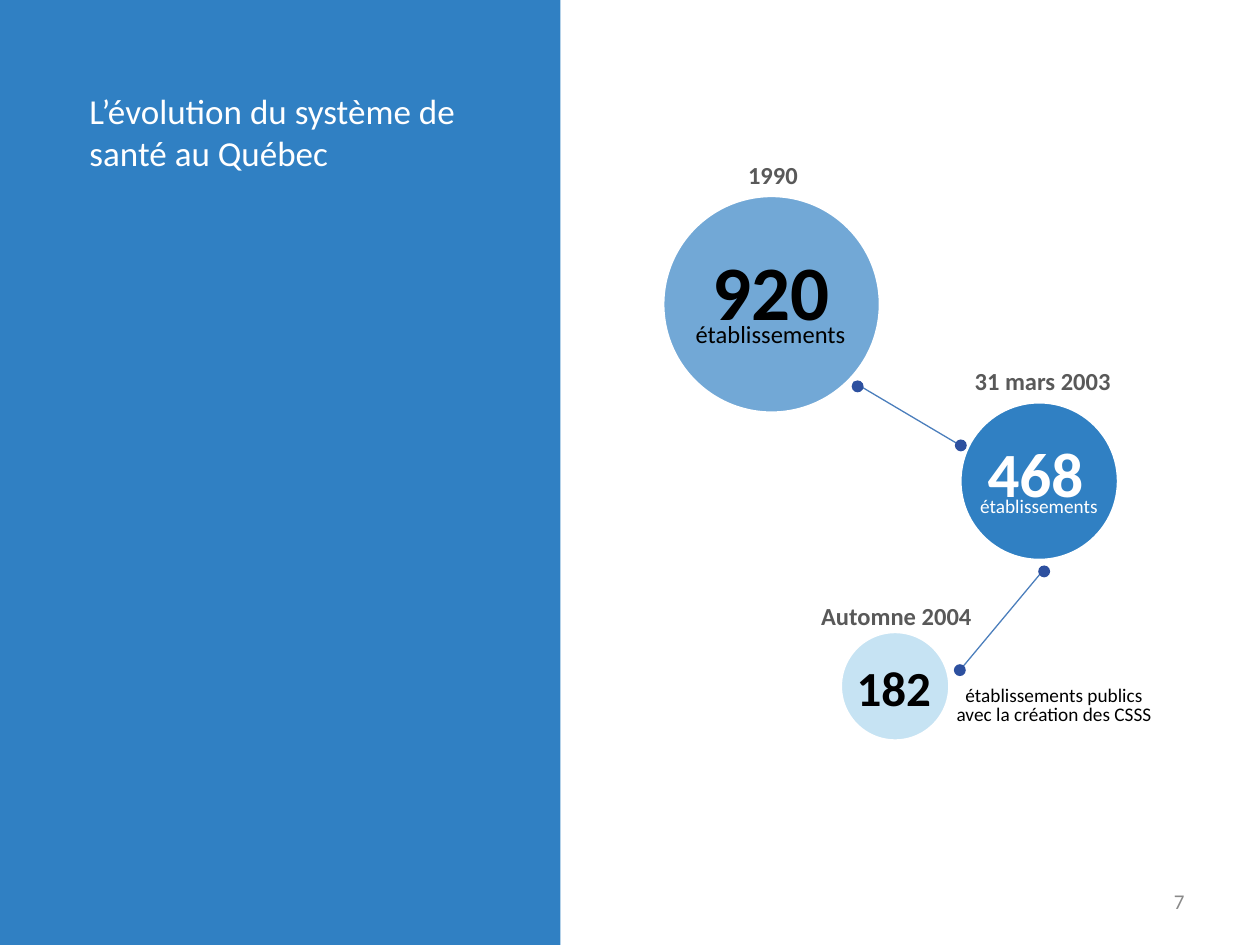
from lxml.etree import SubElement
from pptx import Presentation
from pptx.dml.color import RGBColor
from pptx.enum.shapes import MSO_CONNECTOR, MSO_SHAPE
from pptx.enum.text import MSO_ANCHOR, MSO_AUTO_SIZE, PP_ALIGN
from pptx.oxml.ns import qn
from pptx.util import Cm, Pt

COLORS = {
    "panel": "3080C3", "pale": "C6E3F3", "dot": "2D509F", "link": "4B7EBC",
    "white": "FFFFFF", "black": "000000", "date": "595959", "number": "898989",
}
LEFT, CENTER, RIGHT = PP_ALIGN.LEFT, PP_ALIGN.CENTER, PP_ALIGN.RIGHT
DOT_SIZE = 0.24


def rgb(name):
    return RGBColor.from_string(COLORS[name])


def add_filled(slide, kind, box, color, alpha=None, outline=None):
    shape = slide.shapes.add_shape(kind, *map(Cm, box))
    shape.shadow.inherit = False
    shape.fill.solid()
    shape.fill.fore_color.rgb = rgb(color)
    if alpha:
        fill_color = shape.element.spPr.find(qn("a:solidFill"))[0]
        SubElement(fill_color, qn("a:alpha")).set("val", str(alpha * 1000))
    if outline:
        shape.line.color.rgb = rgb(outline)
        shape.line.width = Pt(2)
    else:
        shape.line.fill.background()


def add_link(slide, start, end):
    link = slide.shapes.add_connector(MSO_CONNECTOR.STRAIGHT, *map(Cm, start + end))
    link.line.color.rgb = rgb("link")
    link.line.width = Pt(0.75)
    SubElement(link.element.spPr, qn("a:effectLst"))


def write_text(shape, lines, size, color, bold=False, align=LEFT,
               anchor=MSO_ANCHOR.TOP, spacing=None):
    frame = shape.text_frame
    frame.text = "\n".join(lines)
    frame_format = {"word_wrap": True, "auto_size": MSO_AUTO_SIZE.NONE,
                    "vertical_anchor": anchor}
    for name, value in frame_format.items():
        setattr(frame, name, value)
    font_format = {"name": "Calibri", "size": Pt(size), "bold": bold}
    for paragraph in frame.paragraphs:
        paragraph.alignment = align
        if spacing:
            paragraph.line_spacing = Pt(spacing)
        for name, value in font_format.items():
            setattr(paragraph.font, name, value)
        paragraph.font.color.rgb = rgb(color)


def add_label(slide, box, lines, size, color, **options):
    write_text(slide.shapes.add_textbox(*map(Cm, box)), lines, size, color, **options)


def set_title(slide, text):
    title = slide.shapes.title
    title.left, title.top, title.width, title.height = map(Cm, (1.55, 1.68, 8.2, 1.96))
    write_text(title, [text], 20, "white")
    # Bring the title in front of the panel
    slide.shapes.element.append(title.element)


def main():
    prs = Presentation()
    prs.slide_width, prs.slide_height = Cm(25.4), Cm(19.05)
    slide = prs.slides.add_slide(prs.slide_layouts[5])

    # Side panel with the title
    add_filled(slide, MSO_SHAPE.RECTANGLE, (0, 0, 11.3, 19.05), "panel")
    set_title(slide, "L’évolution du système de santé au Québec")

    # Circles sized by number of establishments
    for left, top, size, color, alpha in [
        (13.36, 3.94, 4.39, "panel", 68),
        (19.35, 8.1, 3.2, "panel", None),
        (16.94, 12.73, 2.21, "pale", None),
    ]:
        add_filled(slide, MSO_SHAPE.OVAL, (left, top, size, size), color, alpha, "white")

    # Dates
    for box, date, align in [
        ((14.83, 3.1, 1.6, 1.24), "1990", LEFT),
        ((19.33, 7.26, 3.38, 0.86), "31 mars 2003", CENTER),
        ((16.28, 11.99, 3.58, 0.86), "Automne 2004", CENTER),
    ]:
        add_label(slide, box, [date], 14, "date", bold=True, align=align)

    # Counts
    for box, count, size, color in [
        ((14.12, 4.78, 3, 2.13), "920", 44, "black"),
        ((19.66, 8.64, 3, 1.8), "468", 36, "white"),
        ((17.02, 13.13, 2.18, 1.45), "182", 28, "black"),
    ]:
        add_label(slide, box, [count], size, color, bold=True)

    # Units
    for box, lines, size, color, spacing in [
        ((13.72, 6.3, 3.63, 0.86), ["établissements"], 14, "black", None),
        ((19.13, 9.83, 3.63, 0.71), ["établissements"], 11, "white", None),
        ((19, 13.72, 4.5, 1.04),
         ["établissements publics", "avec la création des CSSS"], 11, "black", 11),
    ]:
        add_label(slide, box, lines, size, color, align=CENTER, spacing=spacing)

    # Links between the periods, with their end dots
    for start, end in [((17.2, 7.7), (19.46, 9.04)), ((20.96, 11.58), (19.41, 13.44))]:
        add_link(slide, start, end)
    for left, top in [(17.17, 7.67), (19.25, 8.86), (20.93, 11.4), (19.23, 13.39)]:
        add_filled(slide, MSO_SHAPE.OVAL, (left, top, DOT_SIZE, DOT_SIZE), "dot")

    # Page number
    add_label(slide, (18.21, 17.65, 5.92, 1.02), ["7"], 12, "number",
              align=RIGHT, anchor=MSO_ANCHOR.MIDDLE)

    prs.save("out.pptx")


if __name__ == "__main__":
    main()
